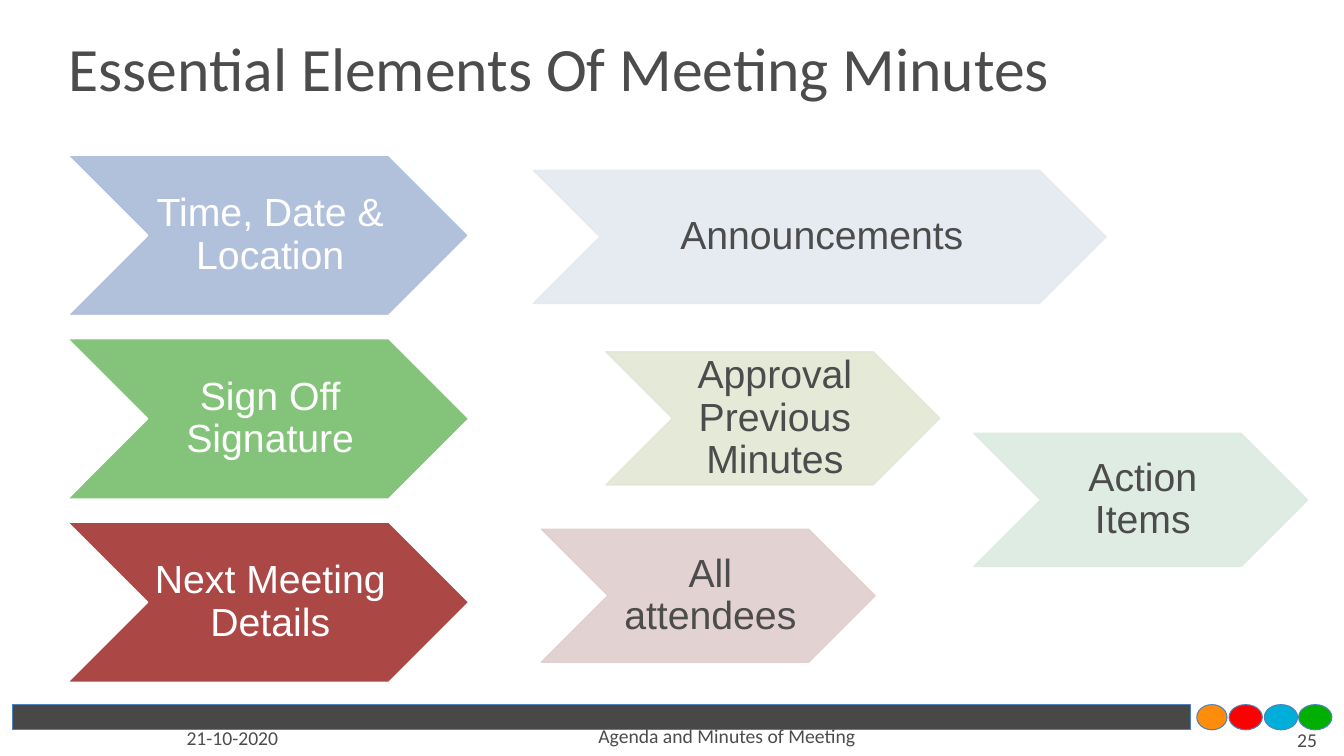
from pptx import Presentation
from pptx.dml.color import RGBColor
from pptx.enum.shapes import MSO_SHAPE
from pptx.enum.text import MSO_ANCHOR, PP_ALIGN
from pptx.oxml.ns import qn
from pptx.util import Pt
from lxml.etree import SubElement

PX = 9144  # 100 px to the inch
GREY, WHITE, OUTLINE = "4C4C4C", "FFFFFF", "4F81BD"


def color(value):
    return RGBColor.from_string(value)


def put(kind, box, text="", size=14, font="Calibri", ink=GREY, fill=None,
        line=OUTLINE, weight=0.75, opacity=100, anchor=MSO_ANCHOR.TOP,
        insets=(10, 5, 10, 5), spacing=None):
    """Place a preset shape, or a text box when kind is None."""
    place = [n * PX for n in box]
    if kind is None:
        item = slide.shapes.add_textbox(*place)
    else:
        item = slide.shapes.add_shape(kind, *place)
        item.shadow.inherit = False
        item.line.width = Pt(weight)
        for paint, value in ((item.fill, fill), (item.line.fill, line)):
            paint.solid()
            paint.fore_color.rgb = color(value)
        if opacity < 100:
            for tint in item._element.spPr.iter(qn("a:srgbClr")):
                SubElement(tint, qn("a:alpha"), val=str(opacity * 1000))
    if text:
        frame = item.text_frame
        left, top, right, bottom = (n * PX for n in insets)
        frame_format = {"word_wrap": True, "vertical_anchor": anchor,
                        "margin_left": left, "margin_top": top,
                        "margin_right": right, "margin_bottom": bottom}
        for key, value in frame_format.items():
            setattr(frame, key, value)
        paragraph = frame.paragraphs[0]
        paragraph.alignment = PP_ALIGN.CENTER
        paragraph.line_spacing = spacing
        run = paragraph.add_run()
        run.text = text
        run.font.size, run.font.name = Pt(size), font
        run.font.color.rgb = color(ink)
    return item


deck = Presentation()
deck.slide_width, deck.slide_height = 1333 * PX, 750 * PX
slide = deck.slides.add_slide(deck.slide_layouts[6])

# Footer bar and dots
put(MSO_SHAPE.RECTANGLE, (12, 699, 1169, 25), fill="484848")
for left, width, fill in ((1187, 30, "FF8C0B"), (1219, 33, "FF0000"),
                          (1254, 33, "00AEDA"), (1288, 33, "00AF00")):
    put(MSO_SHAPE.OVAL, (left, 699, width, 25), fill=fill)

# Title
put(None, (55, 17, 1000, 99), "Essential Elements Of Meeting Minutes",
    size=44, anchor=MSO_ANCHOR.MIDDLE)

# Date, footer and page number
for box, text in (((75, 715, 311, 40), "21-10-2020"),
                  ((510, 713, 422, 40), "Agenda and Minutes of Meeting"),
                  ((1141, 717, 311, 40), "25")):
    put(None, box, text)

chevron_format = {"size": 28, "font": "Arial", "weight": 1, "spacing": 0.9,
                  "anchor": MSO_ANCHOR.MIDDLE, "insets": (4, 2, 0, 2)}

# Main elements: one column at an even pitch
main_elements = (("Time, Date & Location", "B2C1DB"),
                 ("Sign Off Signature", "84C47A"),
                 ("Next Meeting Details", "AB4846"))
for row, (text, fill) in enumerate(main_elements):
    put(MSO_SHAPE.CHEVRON, (67, 154 + row * 182, 398, 159), text, ink=WHITE,
        fill=fill, line=WHITE, **chevron_format)

# Supporting elements: pale chevrons
supporting_elements = (("Announcements", "E4E9F1", 529, 169, 568),
                       ("Action Items", "DCEBE2", 966, 430, 331),
                       ("Approval Previous Minutes", "E2E7D4", 601, 349, 331),
                       ("All attendees", "E1CECE", 537, 525, 331))
for text, fill, left, top, width in supporting_elements:
    put(MSO_SHAPE.CHEVRON, (left, top, width, 132), text, fill=fill,
        line=fill, opacity=90, **chevron_format)

deck.save("out.pptx")
